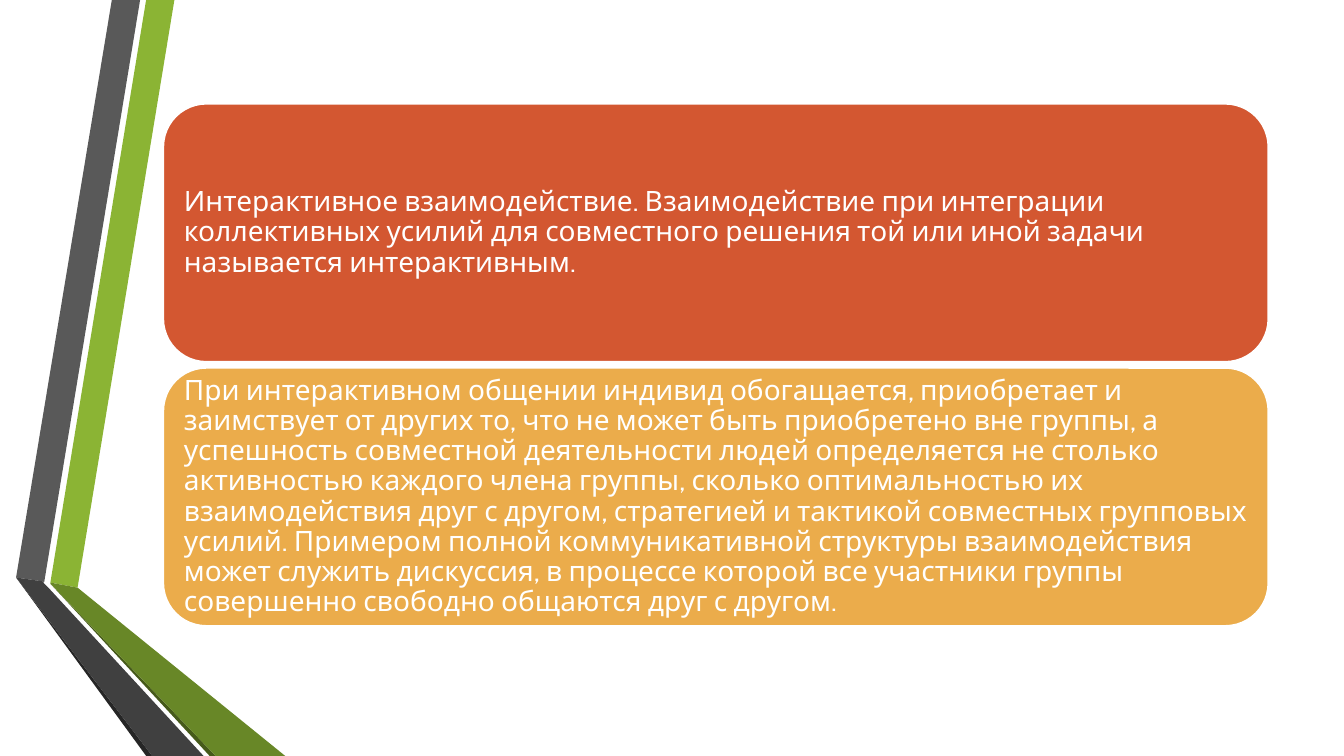
"""Build a slide with two text panels beside a folded ribbon."""
from dataclasses import dataclass

from pptx import Presentation
from pptx.dml.color import RGBColor
from pptx.enum.shapes import MSO_SHAPE
from pptx.enum.text import MSO_ANCHOR, PP_ALIGN
from pptx.slide import Slide
from pptx.util import Inches, Pt

WHITE = "FFFFFF"
LEFT, TOP, WIDTH, HEIGHT, STEP = 1.62, 1.03, 10.96, 2.56, 2.62


@dataclass
class Facet:
    fill: str
    points: list[tuple[float, float]]


@dataclass
class Panel:
    fill: str
    text: str


FACETS = [
    Facet("8BB434", [(0.5, 5.78), (0.77, 5.83), (1.73, 0), (1.45, 0)]),
    Facet("595959", [(1.39, 0), (1.11, 0), (0.16, 5.73), (0.44, 5.77)]),
    Facet("262626", [(0.16, 5.73), (1.45, 7.5), (1.51, 7.5)]),
    Facet("465A1A", [(0.5, 5.79), (2.08, 7.5), (2.14, 7.5)]),
    Facet("688727", [(0.5, 5.79), (2.14, 7.5), (2.83, 7.5), (0.77, 5.83), (0.5, 5.78)]),
    Facet("404040", [(2.02, 7.5), (0.48, 5.83), (0.43, 5.78), (0.44, 5.77),
                     (0.16, 5.73), (1.51, 7.5)]),
]

PANELS = [
    Panel("D35731", "Интерактивное взаимодействие. Взаимодействие при интеграции "
          "коллективных усилий для совместного решения той или иной задачи "
          "называется интерактивным."),
    Panel("EBAC4B", "При интерактивном общении индивид обогащается, приобретает и "
          "заимствует от других то, что не может быть приобретено вне группы, а "
          "успешность совместной деятельности людей определяется не столько "
          "активностью каждого члена группы, сколько оптимальностью их "
          "взаимодействия друг с другом, стратегией и тактикой совместных "
          "групповых усилий. Примером полной коммуникативной структуры "
          "взаимодействия может служить дискуссия, в процессе которой все "
          "участники группы совершенно свободно общаются друг с другом."),
]

FRAME = {"word_wrap": True, "vertical_anchor": MSO_ANCHOR.MIDDLE}
FRAME |= {f"margin_{side}": Inches(0.08) for side in ("left", "top", "right", "bottom")}
PARA = {"alignment": PP_ALIGN.LEFT, "line_spacing": 0.9, "space_after": Pt(7)}
FONT = {"name": "Cabin", "size": Pt(20)}


def color(code: str) -> RGBColor:
    """Turn a hex string into a colour."""
    return RGBColor.from_string(code)


def style(item: object, values: dict) -> None:
    """Set each format value on the item."""
    for name, value in values.items():
        setattr(item, name, value)


def paint(shape: object, fill: str) -> None:
    """Give the shape a flat fill without shadow."""
    shape.shadow.inherit = False
    shape.fill.solid()
    shape.fill.fore_color.rgb = color(fill)


def draw_facet(slide: Slide, facet: Facet) -> None:
    """Draw one side of the ribbon."""
    start, *rest = [(Inches(x), Inches(y)) for x, y in facet.points]
    form = slide.shapes.build_freeform(*start)
    form.add_line_segments(rest, close=True)
    shape = form.convert_to_shape()
    paint(shape, facet.fill)
    shape.line.fill.background()


def draw_panel(slide: Slide, panel: Panel, row: int) -> None:
    """Draw one rounded panel with its text."""
    box = [Inches(n) for n in (LEFT, TOP + row * STEP, WIDTH, HEIGHT)]
    shape = slide.shapes.add_shape(MSO_SHAPE.ROUNDED_RECTANGLE, *box)
    paint(shape, panel.fill)
    shape.line.color.rgb = color(WHITE)
    shape.line.width = Pt(1.25)
    frame = shape.text_frame
    frame.text = panel.text
    para = frame.paragraphs[0]
    font = para.runs[0].font
    style(frame, FRAME)
    style(para, PARA)
    style(font, FONT)
    font.color.rgb = color(WHITE)


def main() -> None:
    """Build and save the deck."""
    deck = Presentation()
    style(deck, {"slide_width": Inches(13.33), "slide_height": Inches(7.5)})
    slide = deck.slides.add_slide(deck.slide_layouts.get_by_name("Blank"))
    for facet in FACETS:
        draw_facet(slide, facet)
    for row, panel in enumerate(PANELS):
        draw_panel(slide, panel, row)
    deck.save("out.pptx")


if __name__ == "__main__":
    main()
